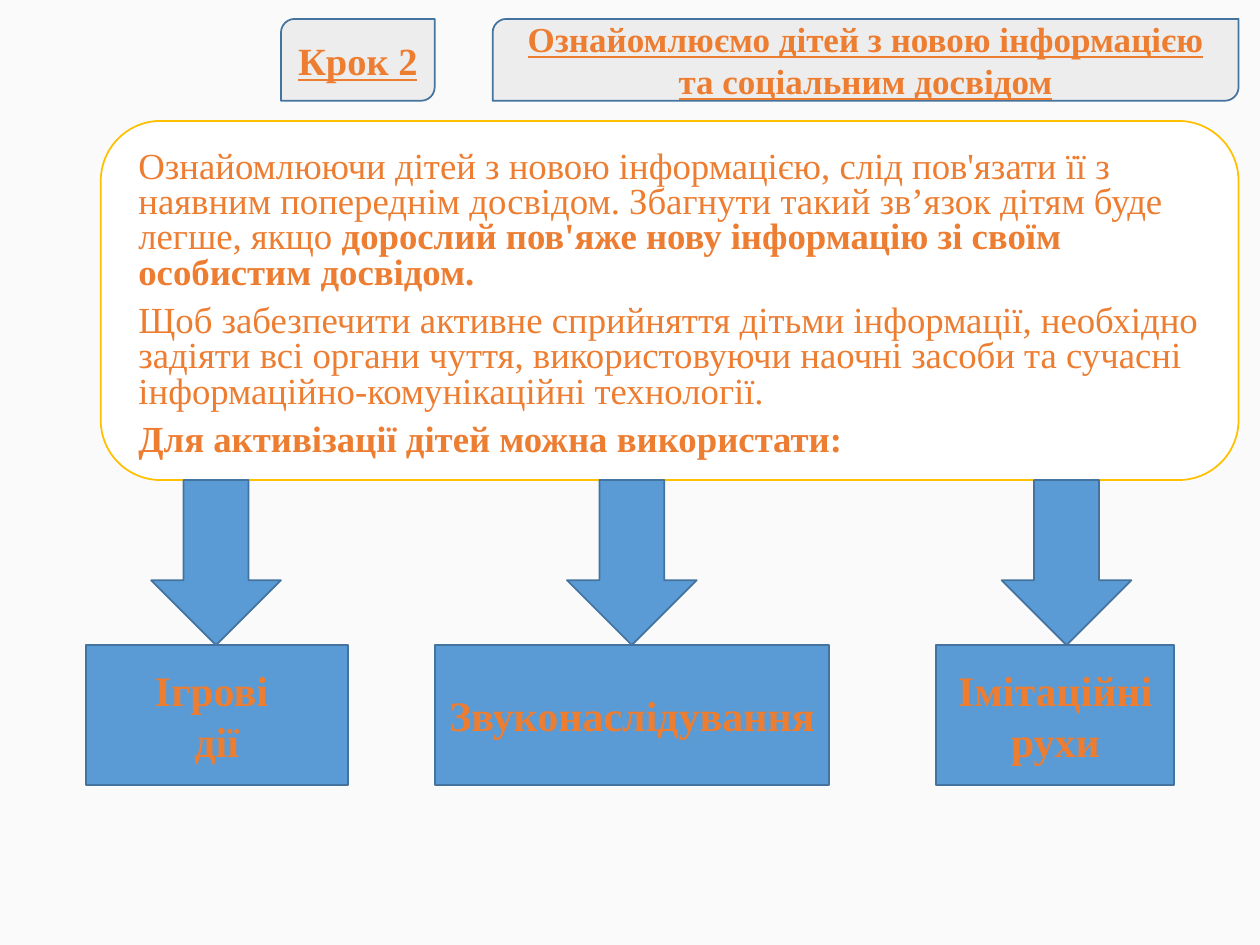
from dataclasses import dataclass
from typing import Optional

from pptx import Presentation
from pptx.dml.color import RGBColor as Rgb
from pptx.enum.shapes import MSO_SHAPE as Kind
from pptx.enum.text import MSO_ANCHOR as Anchor, PP_ALIGN as Align
from pptx.shapes.autoshape import Shape
from pptx.slide import Slide
from pptx.util import Inches, Pt


@dataclass(frozen=True)
class Theme:
    back: str = "FAFAFA"
    panel: str = "FFFFFF"
    gold: str = "FFC000"
    head: str = "EDEDED"
    blue: str = "5B9BD5"
    edge: str = "43739E"
    ink: str = "ED7D31"
    font: str = "Times New Roman"
    body: int = 21
    title: int = 20
    step: int = 22
    label: int = 24


@dataclass(frozen=True)
class Box:
    left: float
    top: float
    width: float
    height: float

    def lengths(self) -> list[Inches]:
        return [Inches(n) for n in (self.left, self.top, self.width, self.height)]


@dataclass(frozen=True)
class Head:
    text: str
    left: float
    width: float
    size: int


@dataclass(frozen=True)
class Branch:
    text: str
    left: float
    width: float
    arrow: float


THEME = Theme()
PANEL = Box(0.8, 0.96, 9.03, 2.85)
BODY = Box(1, 1.15, 8.62, 2.67)
ARROW_TOP, ARROW_W, ARROW_H = 3.81, 1.03, 1.31
LABEL_TOP, LABEL_H = ARROW_TOP + ARROW_H, 1.11
HEAD_TOP, HEAD_H = 0.15, 0.65

HEADS = [
    Head("Крок 2", 2.23, 1.22, THEME.step),
    Head("Ознайомлюємо дітей з новою інформацією та соціальним досвідом",
         3.91, 5.92, THEME.title),
]
BRANCHES = [
    Branch("Ігрові \nдії", 0.68, 2.08, 1.2),
    Branch("Звуконаслідування ", 3.45, 3.13, 4.5),
    Branch("Імітаційні рухи", 7.43, 1.89, 7.95),
]
# Each paragraph is a list of (text, bold) pieces.
PARAS = [
    [("Ознайомлюючи дітей з новою інформацією, слід пов'язати її з наявним "
      "попереднім досвідом. Збагнути такий зв’язок дітям буде легше, якщо ", False),
     ("дорослий пов'яже нову інформацію зі своїм особистим досвідом.", True)],
    [("Щоб забезпечити активне сприйняття дітьми інформації, необхідно задіяти "
      "всі органи чуття, використовуючи наочні засоби та сучасні "
      "інформаційно-комунікаційні технології.", False)],
    [("Для активізації дітей можна використати:", True)],
]


def style(font, size: int, bold: bool, under: Optional[bool] = None) -> None:
    font.name = THEME.font
    font.size = Pt(size)
    font.bold = bold
    font.underline = under
    font.color.rgb = Rgb.from_string(THEME.ink)


def draw(slide: Slide, kind: Kind, box: Box, fill: str, line: str) -> Shape:
    shape = slide.shapes.add_shape(kind, *box.lengths())
    shape.shadow.inherit = False
    shape.fill.solid()
    shape.fill.fore_color.rgb = Rgb.from_string(fill)
    shape.line.color.rgb = Rgb.from_string(line)
    shape.line.width = Pt(1)
    return shape


def write(shape: Shape, text: str, size: int, under: Optional[bool] = None) -> None:
    """Put bold centred text in a shape."""
    frame = shape.text_frame
    frame.text = text
    frame.word_wrap = True
    frame.vertical_anchor = Anchor.MIDDLE
    for para in frame.paragraphs:
        para.alignment = Align.CENTER
        for run in para.runs:
            style(run.font, size, True, under)


def add_body(slide: Slide) -> None:
    frame = slide.shapes.add_textbox(*BODY.lengths()).text_frame
    frame.word_wrap = True
    for i, parts in enumerate(PARAS):
        para = frame.add_paragraph() if i else frame.paragraphs[0]
        para.line_spacing = 0.8
        para.space_before = Pt(7.5 if i else 0)
        for text, bold in parts:
            run = para.add_run()
            run.text = text
            style(run.font, THEME.body, bold)


def main() -> None:
    deck = Presentation()
    deck.slide_width, deck.slide_height = Inches(10), Inches(7.5)
    slide = deck.slides.add_slide(deck.slide_layouts[6])
    slide.background.fill.solid()
    slide.background.fill.fore_color.rgb = Rgb.from_string(THEME.back)

    draw(slide, Kind.ROUNDED_RECTANGLE, PANEL, THEME.panel, THEME.gold)
    add_body(slide)
    for head in HEADS:
        box = Box(head.left, HEAD_TOP, head.width, HEAD_H)
        shape = draw(slide, Kind.ROUND_2_DIAG_RECTANGLE, box, THEME.head, THEME.edge)
        write(shape, head.text, head.size, True)
    for item in BRANCHES:
        box = Box(item.arrow, ARROW_TOP, ARROW_W, ARROW_H)
        draw(slide, Kind.DOWN_ARROW, box, THEME.blue, THEME.edge)
        box = Box(item.left, LABEL_TOP, item.width, LABEL_H)
        shape = draw(slide, Kind.RECTANGLE, box, THEME.blue, THEME.edge)
        write(shape, item.text, THEME.label)
    deck.save("out.pptx")


if __name__ == "__main__":
    main()
